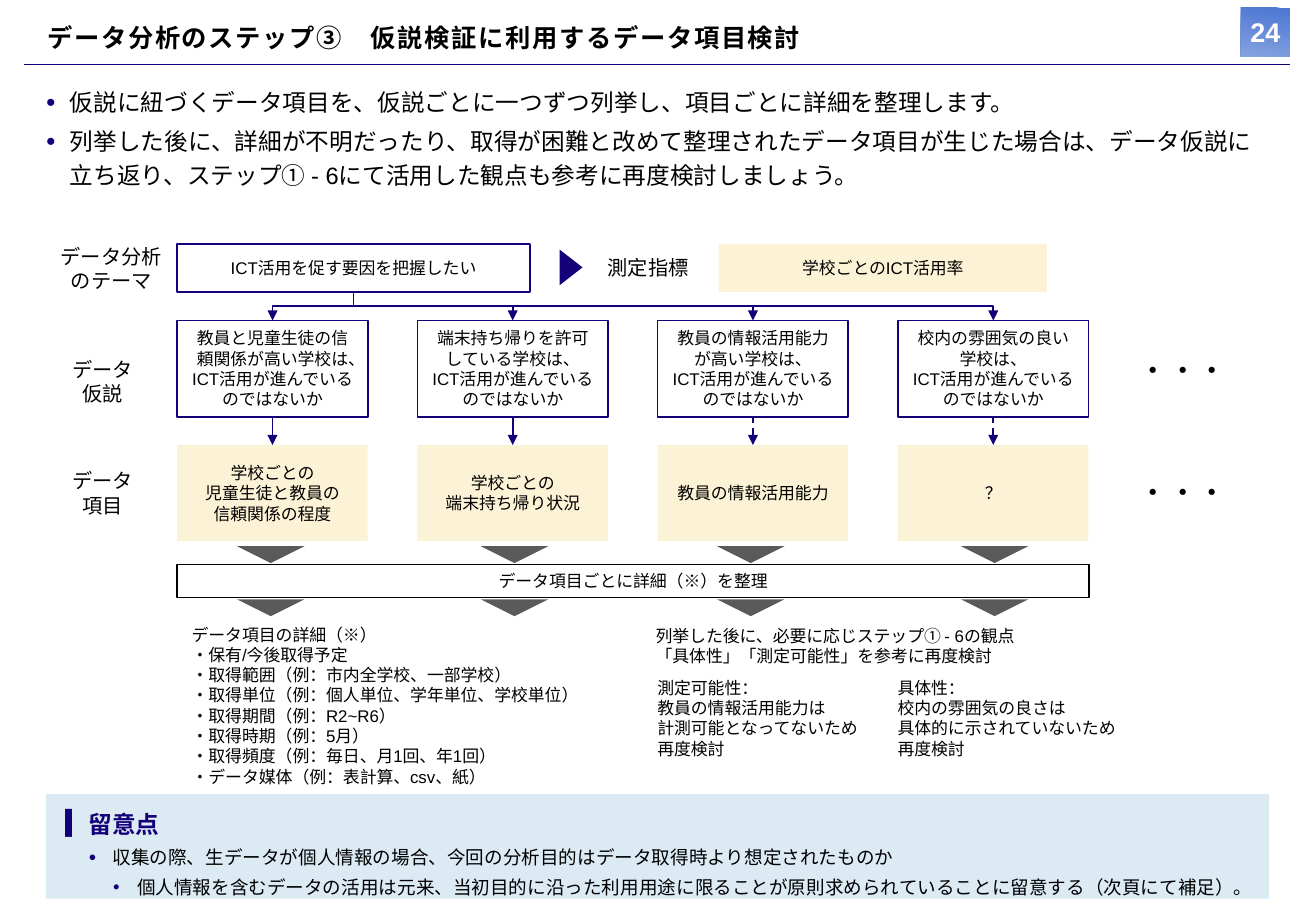
import lxml.etree
import pptx
import pptx.dml.color
import pptx.enum.dml
import pptx.enum.shapes
import pptx.enum.text
import pptx.oxml.ns
import pptx.util

Pt = pptx.util.Pt
SHAPE = pptx.enum.shapes.MSO_SHAPE
CONNECTOR = pptx.enum.shapes.MSO_CONNECTOR
ALIGN = pptx.enum.text.PP_ALIGN
ANCHOR = pptx.enum.text.MSO_ANCHOR
NAVY, BLACK, WHITE = "140078", "000000", "FFFFFF"
CREAM, GREY, PALE_BLUE = "FCF2D5", "5A5A5A", "DCEAF4"
JAPANESE = "Noto Sans CJK JP"
COLUMN_PITCH, COLUMN_WIDTH = 142.4, 113
HYPOTHESES = [
    "教員と児童生徒の信頼関係が高い学校は、",
    "端末持ち帰りを許可している学校は、",
    "教員の情報活用能力が高い学校は、",
    "校内の雰囲気の良い学校は、",
]
ITEMS = [
    ["学校ごとの", "児童生徒と教員の", "信頼関係の程度"],
    ["学校ごとの", "端末持ち帰り状況"],
    ["教員の情報活用能力"],
    ["？"],
]
DETAILS = [
    "データ項目の詳細（※）",
    "・保有/今後取得予定",
    "・取得範囲（例：市内全学校、一部学校）",
    "・取得単位（例：個人単位、学年単位、学校単位）",
    "・取得期間（例：R2~R6）",
    "・取得時期（例：5月）",
    "・取得頻度（例：毎日、月1回、年1回）",
    "・データ媒体（例：表計算、csv、紙）",
]


def color(hex_code):
    return pptx.dml.color.RGBColor.from_string(hex_code)


def add_element(parent, tag, **attributes):
    element = lxml.etree.SubElement(parent, pptx.oxml.ns.qn(tag))
    for key, value in attributes.items():
        element.set(key, str(value))
    return element


def style(paragraph, size, ink=BLACK, align=ALIGN.LEFT, bold=False, font="Arial"):
    paragraph.alignment = align
    paragraph.font.size = Pt(size)
    paragraph.font.bold = bold
    paragraph.font.name = font
    paragraph.font.color.rgb = color(ink)


def write(frame, lines, size, insets=(7.2, 3.6, 7.2, 3.6), wrap=True, anchor=ANCHOR.TOP, **look):
    frame.text = "\n".join(lines)
    frame.auto_size = pptx.enum.text.MSO_AUTO_SIZE.NONE
    frame.word_wrap = wrap
    frame.vertical_anchor = anchor
    frame.margin_left, frame.margin_top, frame.margin_right, frame.margin_bottom = map(Pt, insets)
    for paragraph in frame.paragraphs:
        style(paragraph, size, **look)


def style_bullet(paragraph, symbol, percent, left, space_after, size, level=0, **look):
    properties = paragraph._p.get_or_add_pPr()
    properties.clear()
    properties.set("marL", str(Pt(left)))
    properties.set("indent", str(-Pt(14.2)))
    add_element(add_element(properties, "a:buClr"), "a:srgbClr", val=NAVY)
    add_element(properties, "a:buSzPct", val=percent * 1000)
    add_element(properties, "a:buFont", typeface="Arial")
    add_element(properties, "a:buChar", char=symbol)
    paragraph.level = level
    paragraph.line_spacing = 1.2
    paragraph.space_before = Pt(0)
    paragraph.space_after = Pt(space_after)
    style(paragraph, size, **look)


def place(part, box):
    part.left, part.top, part.width, part.height = map(Pt, box)


def add_label(slide, box, lines, size, **look):
    label = slide.shapes.add_textbox(*map(Pt, box))
    write(label.text_frame, lines, size, **look)


def add_panel(slide, box, fill, lines=(), border=None, weight=1, kind=SHAPE.RECTANGLE):
    panel = slide.shapes.add_shape(kind, *map(Pt, box))
    panel.shadow.inherit = False
    panel.fill.solid()
    panel.fill.fore_color.rgb = color(fill)
    if border:
        panel.line.color.rgb = color(border)
        panel.line.width = Pt(weight)
    else:
        panel.line.fill.background()
    if lines:
        write(panel.text_frame, lines, 10, anchor=ANCHOR.MIDDLE, align=ALIGN.CENTER)
    return panel


def finish_line(line, weight, arrow=False, dashed=False):
    line.line.color.rgb = color(NAVY)
    line.line.width = Pt(weight)
    if dashed:
        line.line.dash_style = pptx.enum.dml.MSO_LINE.DASH
    if arrow:
        add_element(line.line._get_or_add_ln(), "a:tailEnd", type="triangle")
    add_element(line._element.spPr, "a:effectLst")


def link(slide, source, target, kind=CONNECTOR.STRAIGHT, dashed=False):
    line = slide.shapes.add_connector(kind, 0, 0, 0, 0)
    line.begin_connect(source, 2)
    line.end_connect(target, 0)
    if kind == CONNECTOR.ELBOW:
        across, down = line.end_x - line.begin_x, line.end_y - line.begin_y
        center_x, center_y = (line.begin_x + line.end_x) // 2, (line.begin_y + line.end_y) // 2
        line.width, line.height = down, abs(across)
        line.left, line.top = center_x - down // 2, center_y - abs(across) // 2
        frame = line._element.spPr.xfrm
        frame.flipH = across > 0
        frame.set("rot", str((270 if across > 0 else 90) * 60000))
    finish_line(line, 1, arrow=True, dashed=dashed)


def build_header(slide, box):
    x, y, w, h = box
    title = slide.shapes.title
    place(title, (x + 13.5, y + 8.5, 452, 18))
    write(title.text_frame, ["データ分析のステップ③　仮説検証に利用するデータ項目検討"], 15,
          insets=(0, 0, 0, 0), wrap=False, bold=True, font=JAPANESE)
    title.text_frame.paragraphs[0].runs[0]._r.get_or_add_rPr().set("spc", "100")
    rule = slide.shapes.add_connector(CONNECTOR.STRAIGHT, *map(Pt, (x, y + h, x + w, y + h)))
    finish_line(rule, 0.5)
    badge = add_panel(slide, (x + w - 29, y, 29, 29), NAVY)
    badge.fill.gradient()
    badge.fill.gradient_angle = 260
    for stop, shade in zip(badge.fill.gradient_stops, ("4B76D2", "85A2E0")):
        stop.color.rgb = color(shade)
    write(badge.text_frame, ["24"], 16, insets=(0, 0, 0, 0), wrap=False,
          anchor=ANCHOR.MIDDLE, ink=WHITE, align=ALIGN.CENTER, bold=True)


def build_lead(slide, box):
    lead = slide.placeholders[1]
    place(lead, box)
    write(lead.text_frame, [
        "仮説に紐づくデータ項目を、仮説ごとに一つずつ列挙し、項目ごとに詳細を整理します。",
        "列挙した後に、詳細が不明だったり、取得が困難と改めて整理されたデータ項目が生じた場合は、"
        "データ仮説に立ち返り、ステップ① - 6にて活用した観点も参考に再度検討しましょう。",
    ], 14, insets=(0, 0, 0, 0))
    for paragraph in lead.text_frame.paragraphs:
        style_bullet(paragraph, "●", 70, 14.2, 3, 14)


def build_theme(slide, box):
    x, y, w, h = box
    add_label(slide, (x - 81.5, y - 3.5, 85, 36), ["データ分析のテーマ"], 12, align=ALIGN.CENTER)
    theme = add_panel(slide, (x, y, 209, h), WHITE, ["ICT活用を促す要因を把握したい"], NAVY)
    pointer = add_panel(slide, (x + 223, y + 7.25, 21, 13.5), NAVY, kind=SHAPE.ISOSCELES_TRIANGLE)
    pointer.rotation = 90
    add_label(slide, (x + 247.5, y + 3.25, 63.5, 22), ["測定指標"], 12, wrap=False, align=ALIGN.CENTER)
    add_panel(slide, (x + w - 194.5, y, 194.5, h), CREAM, ["学校ごとのICT活用率"])
    return theme


def build_flow(slide, box, theme):
    x, y, w, h = box
    panel_height = 57
    item_y = y + h - panel_height
    for kind, row_y in (("仮説", y + 18), ("項目", item_y + 10.5)):
        add_label(slide, (x - 69.5, row_y, 51, 36), ["データ", kind], 12, wrap=False, align=ALIGN.CENTER)
    for row_y in (y + 15.25, item_y + 14):
        add_label(slide, (x + w + 23, row_y, 67, 28), ["・・・"], 17.4, wrap=False)
    for index, (condition, item_lines) in enumerate(zip(HYPOTHESES, ITEMS)):
        column_x = x + index * COLUMN_PITCH
        hypothesis = add_panel(slide, (column_x, y, COLUMN_WIDTH, panel_height), WHITE,
                               [condition, "ICT活用が進んでいるのではないか"], NAVY)
        item = add_panel(slide, (column_x, item_y, COLUMN_WIDTH, panel_height), CREAM, item_lines)
        link(slide, theme, hypothesis, CONNECTOR.ELBOW)
        link(slide, hypothesis, item, dashed=index >= 2)


def build_organise(slide, box):
    x, y, w, h = box
    add_panel(slide, (x, y + 11, w, h - 22), WHITE, ["データ項目ごとに詳細（※）を整理"], BLACK, 0.75)
    for row_y in (y, y + h - 10):
        for offset in (35.5, 180, 320, 464.5):
            marker = add_panel(slide, (x + offset, row_y, 40, 10), GREY, kind=SHAPE.ISOSCELES_TRIANGLE)
            marker.rotation = 180


def build_follow_up(slide, box):
    x, y, w, h = box
    add_label(slide, (x, y, 255.5, h), DETAILS, 10)
    add_label(slide, (x + 275, y + 0.5, 237, 32),
              ["列挙した後に、必要に応じステップ① - 6の観点", "「具体性」「測定可能性」を参考に再度検討"], 10, wrap=False)
    reviews = [
        ["測定可能性：", "教員の情報活用能力は", "計測可能となってないため", "再度検討"],
        ["具体性：", "校内の雰囲気の良さは", "具体的に示されていないため", "再度検討"],
    ]
    for index, review in enumerate(reviews):
        add_label(slide, (x + 276 + index * COLUMN_PITCH, y + 31.5, 140, 55.5), review, 10, wrap=False)


def build_notice(slide, box):
    notice = add_panel(slide, box, PALE_BLUE)
    write(notice.text_frame, [
        "留意点",
        "収集の際、生データが個人情報の場合、今回の分析目的はデータ取得時より想定されたものか",
        "個人情報を含むデータの活用は元来、当初目的に沿った利用用途に限ることが原則求められていることに留意する（次頁にて補足）。",
    ], 11, insets=(11.5, 5.75, 11.5, 2.9))
    heading, question, caution = notice.text_frame.paragraphs
    style_bullet(heading, "▍", 100, 13.7, 2, 14, ink=NAVY, bold=True, font=JAPANESE)
    style_bullet(question, "●", 70, 28, 2, 11, level=1, font=JAPANESE)
    style_bullet(caution, "•", 100, 42.5, 2, 11, level=2, font=JAPANESE)


def main():
    deck = pptx.Presentation()
    deck.slide_width, deck.slide_height = Pt(780), Pt(540)
    slide = deck.slides.add_slide(deck.slide_layouts[1])
    build_header(slide, (14.5, 4.5, 750, 33.75))
    build_lead(slide, (27.25, 48.75, 725, 63))
    theme = build_theme(slide, (105, 144.5, 515.5, 28.5))
    build_flow(slide, (105, 190, 540, 130.75), theme)
    build_organise(slide, (105, 323.75, 540.5, 41.5))
    build_follow_up(slide, (106.5, 366.5, 559, 104.5))
    build_notice(slide, (27.25, 470.75, 725, 62))
    deck.save("out.pptx")


if __name__ == "__main__":
    main()
